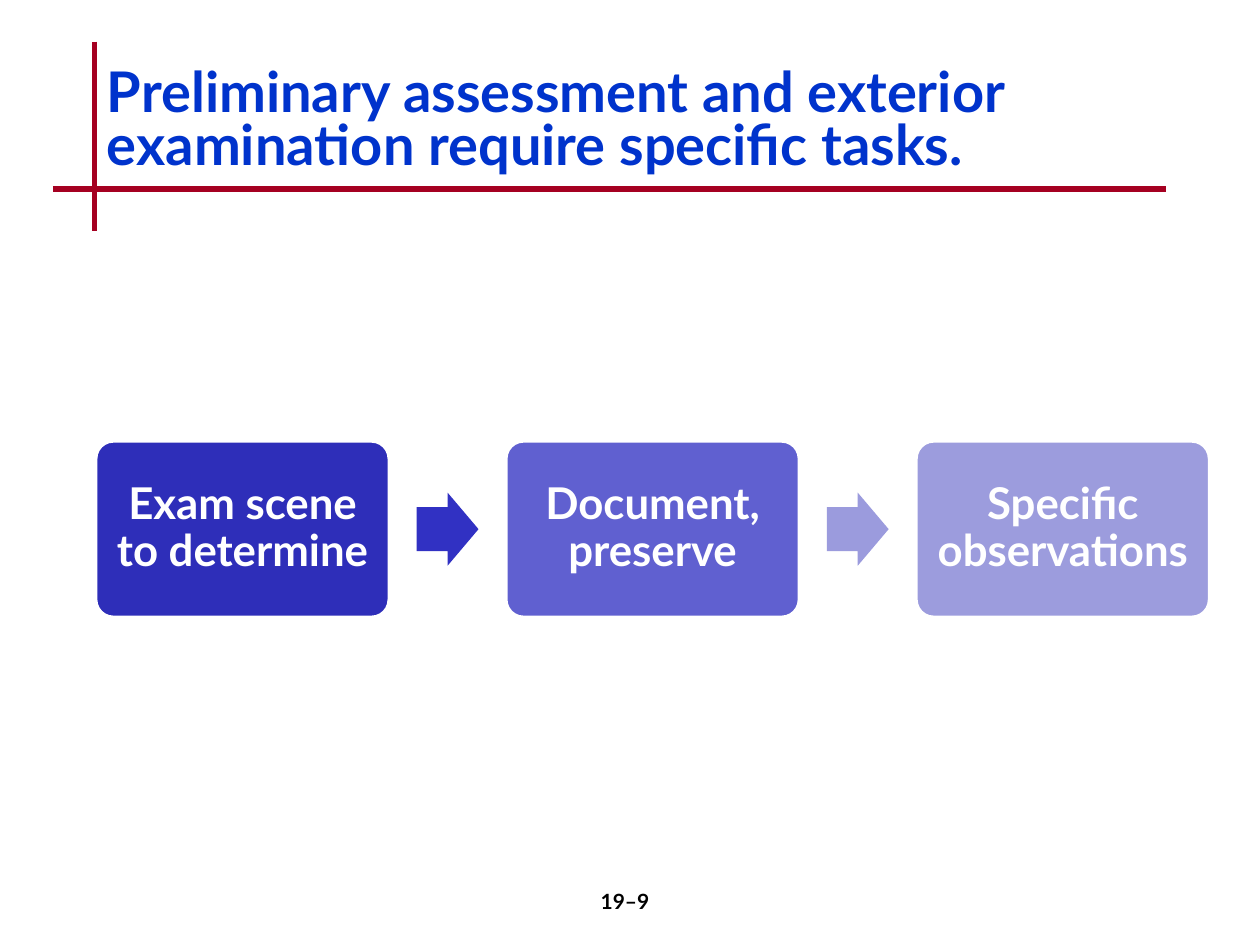
from dataclasses import dataclass

from lxml.etree import SubElement
from pptx import Presentation
from pptx.dml.color import RGBColor
from pptx.enum.shapes import MSO_CONNECTOR as Connector, MSO_SHAPE as Shape
from pptx.enum.text import MSO_ANCHOR as Anchor, PP_ALIGN as Align
from pptx.oxml.ns import qn
from pptx.util import Inches, Pt

TITLE = "Preliminary assessment and exterior examination require specific tasks."
PAGE_NUMBER = "19–9"
STEPS = [
    ("Exam scene to determine", "2E2EB9"),
    ("Document, preserve", "6060D0"),
    ("Specific observations", "9C9CDD"),
]
ARROW_FILLS = ["3131C3", "9B9BDD"]
RULES = [(0.75, 0.33, 0.75, 1.83), (0.42, 1.5, 9.25, 1.5)]

FIRST_LEFT, LAST_LEFT, STEP_TOP = 0.76, 7.27, 3.5
STEP_WIDTH, STEP_HEIGHT = 2.33, 1.4
ARROW_WIDTH, ARROW_HEIGHT = 0.49, 0.58
STEP_INSET = 0.08


@dataclass(frozen=True)
class Theme:
    font: str = "Lato"
    title: str = "0033CC"
    rule: str = "A50021"
    light: str = "FFFFFF"
    dark: str = "000000"
    title_size: int = 32
    step_size: int = 25
    number_size: int = 12


THEME = Theme()


def write(shape, text, size, color, align, spacing=1.0):
    frame = shape.text_frame
    frame.word_wrap = True
    frame.text = text
    para = frame.paragraphs[0]
    para.alignment = align
    para.line_spacing = spacing
    font = para.runs[0].font
    font.name, font.size, font.bold = THEME.font, Pt(size), True
    font.color.rgb = RGBColor.from_string(color)


def add_rule(page, ends):
    rule = page.shapes.add_connector(Connector.STRAIGHT, *map(Inches, ends))
    rule.line.color.rgb = RGBColor.from_string(THEME.rule)
    rule.line.width = Pt(3)
    SubElement(rule._element.spPr, qn("a:effectLst"))


def add_filled(page, kind, place, fill, adjustments):
    shape = page.shapes.add_shape(kind, *map(Inches, place))
    shape.shadow.inherit = False
    shape.fill.solid()
    shape.fill.fore_color.rgb = RGBColor.from_string(fill)
    shape.line.fill.background()
    for index, value in enumerate(adjustments):
        shape.adjustments[index] = value
    return shape


def add_step(page, left, text, fill):
    place = (left, STEP_TOP, STEP_WIDTH, STEP_HEIGHT)
    box = add_filled(page, Shape.ROUNDED_RECTANGLE, place, fill, [0.1])
    box.line.color.rgb = RGBColor.from_string(THEME.light)
    box.line.width = Pt(2)
    frame = box.text_frame
    frame.margin_left = frame.margin_right = Inches(STEP_INSET)
    frame.margin_top = frame.margin_bottom = Inches(STEP_INSET)
    frame.vertical_anchor = Anchor.MIDDLE
    write(box, text, THEME.step_size, THEME.light, Align.CENTER, 0.9)


def main():
    """Build the slide with its title and three-step process."""
    deck = Presentation()
    deck.slide_width, deck.slide_height = Inches(10), Inches(7.5)
    page = deck.slides.add_slide(deck.slide_layouts[6])

    for ends in RULES:
        add_rule(page, ends)
    title = page.shapes.add_textbox(*map(Inches, (0.75, 0.5, 8.69, 1)))
    write(title, TITLE, THEME.title_size, THEME.title, Align.LEFT, 0.8)
    number = page.shapes.add_textbox(*map(Inches, (3.92, 7, 2.08, 0.5)))
    write(number, PAGE_NUMBER, THEME.number_size, THEME.dark, Align.CENTER)

    pitch = (LAST_LEFT - FIRST_LEFT) / (len(STEPS) - 1)
    for index, (text, fill) in enumerate(STEPS):
        add_step(page, FIRST_LEFT + index * pitch, text, fill)

    arrow_offset = STEP_WIDTH + (pitch - STEP_WIDTH - ARROW_WIDTH) / 2
    arrow_top = STEP_TOP + (STEP_HEIGHT - ARROW_HEIGHT) / 2
    for index, fill in enumerate(ARROW_FILLS):
        left = FIRST_LEFT + index * pitch + arrow_offset
        place = (left, arrow_top, ARROW_WIDTH, ARROW_HEIGHT)
        add_filled(page, Shape.RIGHT_ARROW, place, fill, [0.6, 0.5])

    deck.save("out.pptx")


if __name__ == "__main__":
    main()
